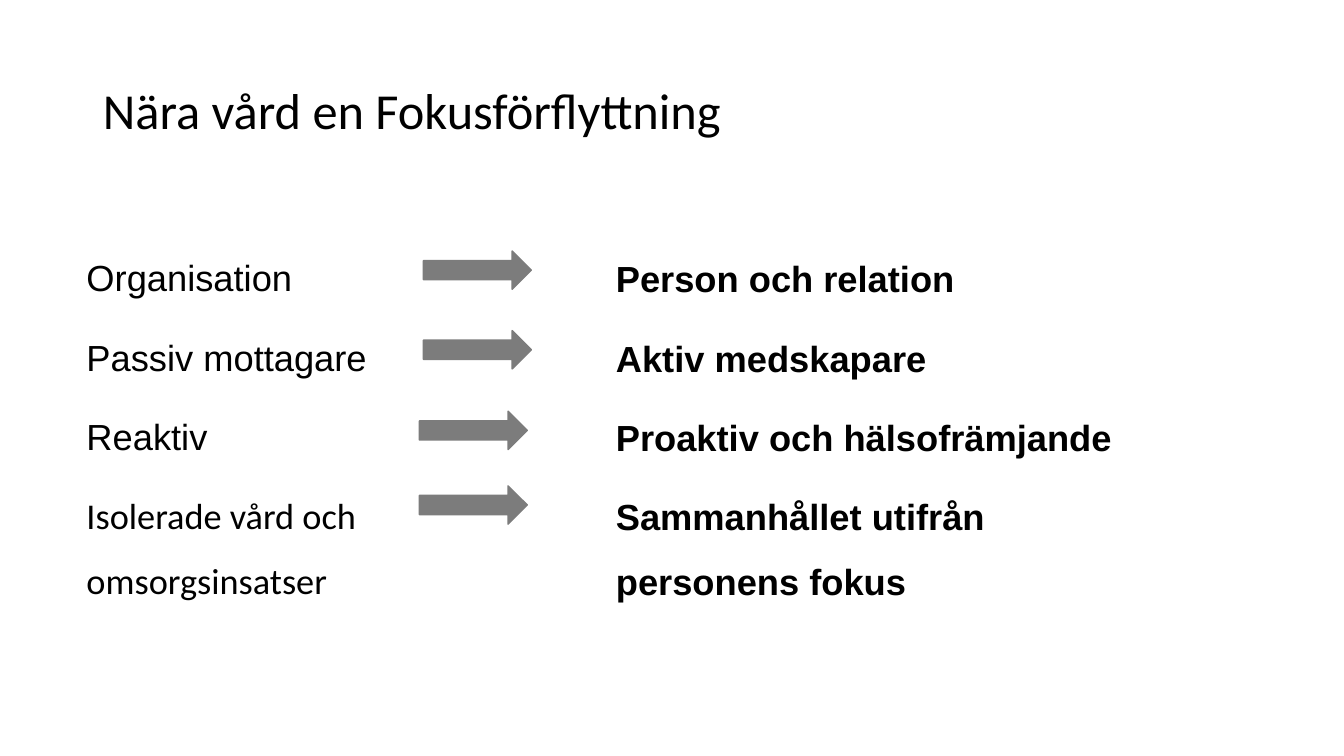
from dataclasses import dataclass

from pptx import Presentation
from pptx.dml.color import RGBColor
from pptx.enum.shapes import MSO_SHAPE
from pptx.enum.text import MSO_ANCHOR, PP_ALIGN
from pptx.util import Inches, Pt

RIGHT_ARROW = MSO_SHAPE.RIGHT_ARROW
MIDDLE = MSO_ANCHOR.MIDDLE
LEFT = PP_ALIGN.LEFT
TITLE_ONLY = 5


@dataclass(frozen=True)
class Theme:
    ink: RGBColor = RGBColor(0x00, 0x00, 0x00)
    arrow: RGBColor = RGBColor(0x7C, 0x7C, 0x7C)
    title_font: str = "Calibri"
    body_font: str = "Arial"
    title_size: float = 36
    body_size: float = 25.9


class FocusSlide:
    def __init__(self, deck, theme):
        self.theme = theme
        self.page = deck.slides.add_slide(deck.slide_layouts[TITLE_ONLY])

    def style(self, para, font, size, bold=False):
        para.alignment = LEFT
        para.font.name = font
        para.font.size = Pt(size)
        para.font.bold = bold
        para.font.color.rgb = self.theme.ink

    def title(self, text, left, top, width, height):
        box = self.page.shapes.title
        box.left, box.top = Inches(left), Inches(top)
        box.width, box.height = Inches(width), Inches(height)
        box.text_frame.text = text
        box.text_frame.vertical_anchor = MIDDLE
        para = box.text_frame.paragraphs[0]
        para.line_spacing = 0.9
        self.style(para, self.theme.title_font, self.theme.title_size)

    def column(self, entries, left, top, width, height, bold=False):
        box = self.page.shapes.add_textbox(
            Inches(left), Inches(top), Inches(width), Inches(height))
        frame = box.text_frame
        frame.word_wrap = True
        for index, (text, font) in enumerate(entries):
            para = frame.add_paragraph() if index else frame.paragraphs[0]
            para.text = text
            para.line_spacing = 1.5
            para.space_before = Pt(10 if index else 0)
            para._p.get_or_add_pPr().set("marL", str(Inches(0.03)))
            self.style(para, font, self.theme.body_size, bold)

    def arrow(self, left, top, width=1.07, height=0.38):
        shape = self.page.shapes.add_shape(
            RIGHT_ARROW, Inches(left), Inches(top), Inches(width), Inches(height))
        shape.shadow.inherit = False
        shape.fill.solid()
        shape.fill.fore_color.rgb = self.theme.arrow
        shape.line.color.rgb = self.theme.arrow
        shape.line.width = Pt(1)


def main():
    deck = Presentation()
    deck.slide_width, deck.slide_height = Inches(13.33), Inches(7.5)
    theme = Theme()
    slide = FocusSlide(deck, theme)

    slide.title("Nära vård en Fokusförflyttning", 0.92, 0.4, 11.5, 1.45)

    before = [
        ("Organisation", theme.body_font),
        ("Passiv mottagare", theme.body_font),
        ("Reaktiv", theme.body_font),
        ("Isolerade vård och omsorgsinsatser", theme.title_font),
    ]
    after = [(text, theme.body_font) for text in (
        "Person och relation",
        "Aktiv medskapare",
        "Proaktiv och hälsofrämjande",
        "Sammanhållet utifrån personens fokus",
    )]
    slide.column(before, 0.73, 2.27, 5.16, 4.09)
    slide.column(after, 5.98, 2.28, 5.25, 4.09, bold=True)

    for left, top in ((4.2, 2.49), (4.2, 3.28), (4.16, 4.08), (4.16, 4.82)):
        slide.arrow(left, top)

    deck.save("out.pptx")


if __name__ == "__main__":
    main()
